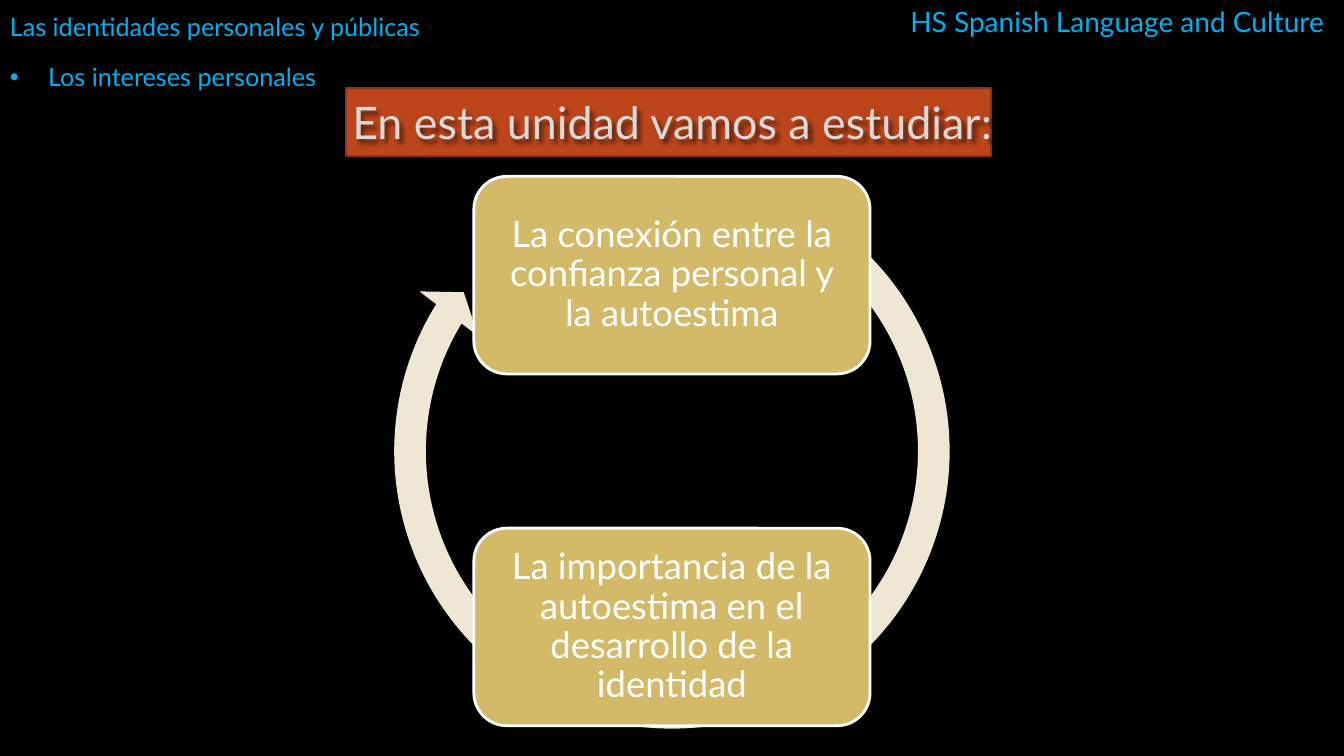
from lxml import etree
from pptx import Presentation
from pptx.dml.color import RGBColor
from pptx.enum.shapes import MSO_SHAPE
from pptx.enum.text import MSO_ANCHOR, PP_ALIGN
from pptx.oxml import parse_xml
from pptx.oxml.ns import nsdecls, qn
from pptx.util import Inches, Pt

RECT, ROUND_RECT = MSO_SHAPE.RECTANGLE, MSO_SHAPE.ROUNDED_RECTANGLE
CIRCULAR_ARROW = MSO_SHAPE.CIRCULAR_ARROW
CENTER, LEFT = PP_ALIGN.CENTER, PP_ALIGN.LEFT
MIDDLE, TOP = MSO_ANCHOR.MIDDLE, MSO_ANCHOR.TOP

BLACK, WHITE, BLUE = "000000", "FFFFFF", "00B0F0"
RUST, DARK_RUST, GREY = "BC451B", "8B3314", "DADADA"
SAND, GOLD = "EFE7D4", "D3BA68"

TOPICS = ["La conexión entre la confianza personal y la autoestima",
          "La importancia de la autoestima en el desarrollo de la identidad"]


def rgb(color):
    return RGBColor.from_string(color)


class SlideBuilder:
    font = "Lato"

    def __init__(self, prs, background):
        self.s = prs.slides.add_slide(prs.slide_layouts[6])
        fill = self.s.background.fill
        fill.solid()
        fill.fore_color.rgb = rgb(background)

    def shape(self, kind, box, fill, line=None, width=0):
        sp = self.s.shapes.add_shape(kind, *map(Inches, box))
        sp.shadow.inherit = False
        sp.fill.solid()
        sp.fill.fore_color.rgb = rgb(fill)
        if line:
            sp.line.color.rgb = rgb(line)
            sp.line.width = Pt(width)
        else:
            sp.line.fill.background()
        return sp

    def text(self, sp, lines, size, color, align=LEFT, anchor=TOP, wrap=True,
             inset=None, **spacing):
        """Fill a shape with paragraphs; spacing holds paragraph attributes."""
        tf = sp.text_frame
        frame_format = {"word_wrap": wrap, "vertical_anchor": anchor}
        if inset is not None:
            for side in ("left", "top", "right", "bottom"):
                frame_format["margin_" + side] = Inches(inset)
        for name, value in frame_format.items():
            setattr(tf, name, value)
        for i, line in enumerate(lines):
            p = tf.add_paragraph() if i else tf.paragraphs[0]
            for name, value in {"alignment": align, **spacing}.items():
                setattr(p, name, value)
            r = p.add_run()
            r.text = line
            for name, value in {"name": self.font, "size": Pt(size)}.items():
                setattr(r.font, name, value)
            r.font.color.rgb = rgb(color)

    def text_box(self, box, lines, size, color, **options):
        sp = self.s.shapes.add_textbox(*map(Inches, box))
        self.text(sp, lines, size, color, **options)
        return sp


def add_bullet(p, indent):
    pPr = p._p.get_or_add_pPr()
    pPr.set("marL", str(Inches(indent)))
    pPr.set("indent", str(-Inches(indent)))
    etree.SubElement(pPr, qn("a:buFont")).set("typeface", "Arial")
    etree.SubElement(pPr, qn("a:buChar")).set("char", "•")


def add_text_shadow(sp):
    """Give the text of an unfilled box a soft drop shadow."""
    sp._element.spPr.append(parse_xml(
        f'<a:effectLst {nsdecls("a")}><a:outerShdw blurRad="38100" dist="38100" '
        'dir="2700000"><a:srgbClr val="000000"><a:alpha val="50000"/>'
        '</a:srgbClr></a:outerShdw></a:effectLst>'))


def main():
    prs = Presentation()
    prs.slide_width, prs.slide_height = Inches(13.33), Inches(7.5)
    b = SlideBuilder(prs, BLACK)

    b.shape(RECT, (3.43, 0.87, 6.4, 0.68), RUST, DARK_RUST, 1.25)
    title = b.text_box((2.96, 0.67, 7.42, 1.08), ["En esta unidad vamos a estudiar:"],
                       32, GREY, align=CENTER, anchor=MIDDLE)
    add_text_shadow(title)

    arrow = b.shape(CIRCULAR_ARROW, (3.7, 1.51, 5.93, 5.93), SAND)
    for i, value in enumerate((0.053, 3.439, 126.958, 180.752, 0.062)):
        arrow.adjustments[i] = value

    for i, topic in enumerate(TOPICS):
        card = b.shape(ROUND_RECT, (4.7, 1.75 + 3.49 * i, 3.93, 1.96), GOLD, WHITE, 2)
        b.text(card, [topic], 26, WHITE, align=CENTER, anchor=MIDDLE,
               inset=0.11, line_spacing=0.9)

    theme = b.text_box((0, 0, 5.33, 1.75),
                       ["Las identidades personales y públicas", "Los intereses personales"],
                       18, BLUE, line_spacing=1.2, space_before=Pt(10))
    add_bullet(theme.text_frame.paragraphs[1], 0.38)
    b.text_box((8.93, 0, 4.32, 0.44), ["HS Spanish Language and Culture"],
               20, BLUE, wrap=False)

    prs.save("out.pptx")


if __name__ == "__main__":
    main()
